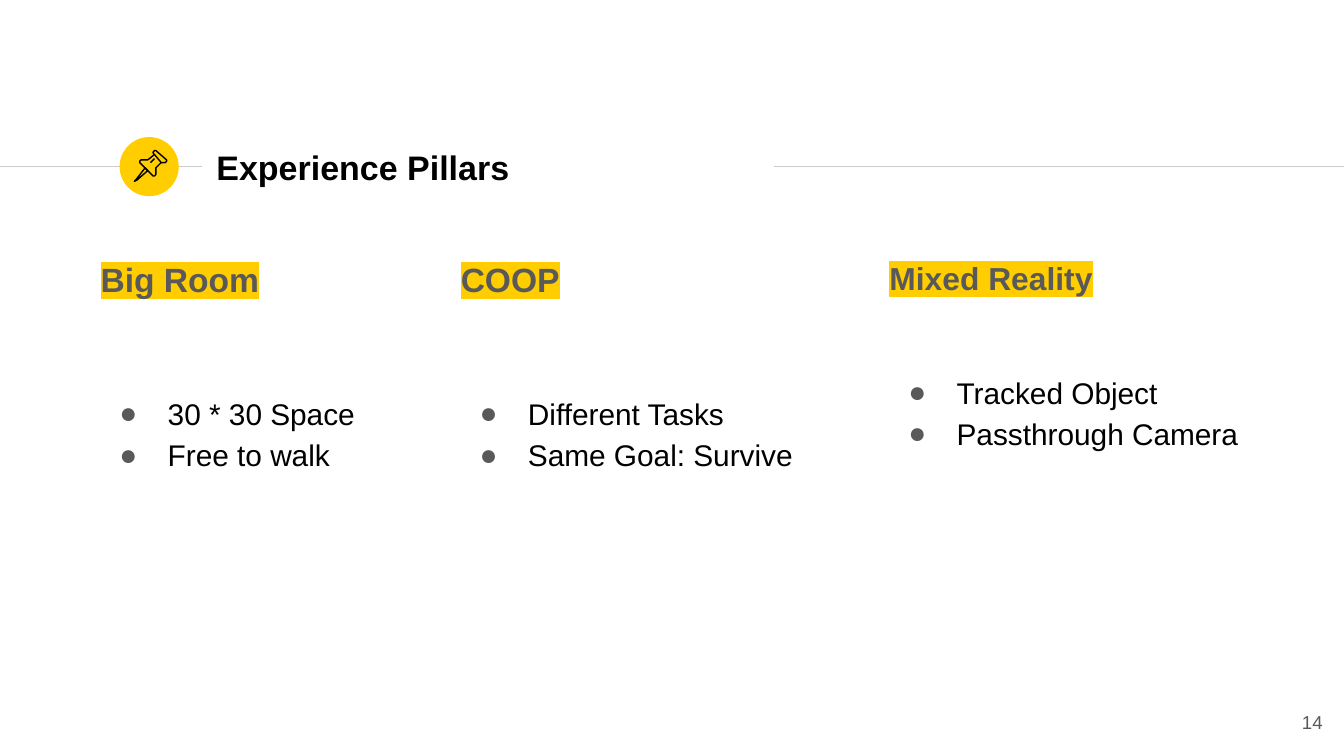
from pptx import Presentation
from pptx.dml.color import RGBColor
from pptx.enum import shapes, text
from pptx.oxml import ns
from pptx.util import Inches, Pt
from lxml import etree

FONT = "Arial"
BLACK, GREY, RULE, YELLOW = "000000", "595959", "CCCCCC", "FFCD00"

# Pushpin outlines in hundredths of an inch from the badge corner: (points, closed)
PIN = [
    ([(19, 23), (12, 32), (11, 33), (13, 32), (21, 25)], True),
    ([(26, 13), (31, 19), (32, 19), (34, 19), (35, 18), (35, 17),
      (27, 10), (26, 10), (25, 11), (25, 12)], True),
    ([(26, 13), (21, 17), (20, 17), (18, 17), (16, 17), (15, 18), (15, 19),
      (25, 29), (26, 29), (27, 28), (27, 26), (27, 23), (31, 19)], False),
    ([(23, 19), (26, 16)], False),
]

# Box, heading, heading size, gap above the bullets in points, bullets
PILLARS = [
    ((0.65, 1.78, 2.83, 3.41), "Big Room", 18, 49,
     ["30 * 30 Space", "Free to walk"]),
    ((3.33, 1.78, 3.19, 3.26), "COOP", 18, 49,
     ["Different Tasks", "Same Goal: Survive"]),
    ((6.52, 1.78, 2.96, 3.41), "Mixed Reality", 17, 39,
     ["Tracked Object", "Passthrough Camera"]),
]


def colour(value):
    return RGBColor.from_string(value)


def add_element(parent, tag, **attributes):
    return etree.SubElement(parent, ns.qn(tag), attributes)


def set_frame(shape, anchor=text.MSO_ANCHOR.TOP):
    frame = shape.text_frame
    frame.word_wrap = True
    frame.auto_size = text.MSO_AUTO_SIZE.NONE
    frame.vertical_anchor = anchor
    frame.margin_left = frame.margin_right = Inches(0.1)
    frame.margin_top = frame.margin_bottom = Inches(0.1)
    return frame


def add_text_box(page, box):
    return set_frame(page.shapes.add_textbox(*map(Inches, box)))


def write(para, words, size, ink=BLACK, bold=False, highlight=None,
          align=text.PP_ALIGN.LEFT, spacing=1.0, before=0):
    para.alignment = align
    para.line_spacing = spacing
    para.space_before = Pt(before)
    span = para.add_run()
    span.text = words
    font = span.font
    font.name, font.size, font.bold = FONT, Pt(size), bold
    font.color.rgb = colour(ink)
    if highlight:
        mark = etree.Element(ns.qn("a:highlight"))
        add_element(mark, "a:srgbClr", val=highlight)
        span._r.get_or_add_rPr().find(ns.qn("a:solidFill")).addnext(mark)


def add_bullet(para):
    properties = para._p.get_or_add_pPr()
    properties.set("marL", str(Inches(0.5)))
    properties.set("indent", str(Inches(-0.36)))
    add_element(add_element(properties, "a:buClr"), "a:srgbClr", val=GREY)
    add_element(properties, "a:buFont", typeface=FONT)
    add_element(properties, "a:buChar", char="●")


def add_rule(page, start, end, height):
    line = page.shapes.add_connector(
        shapes.MSO_CONNECTOR.STRAIGHT,
        Inches(start), Inches(height), Inches(end), Inches(height))
    line.line.color.rgb = colour(RULE)
    line.line.width = Pt(0.75)
    add_element(line._element.spPr, "a:effectLst")


def add_badge(page, box):
    left, top, width, height = map(Inches, box)
    disc = page.shapes.add_shape(shapes.MSO_SHAPE.OVAL, left, top, width, height)
    disc.shadow.inherit = False
    disc.fill.solid()
    disc.fill.fore_color.rgb = colour(YELLOW)
    disc.line.fill.background()

    # Pushpin icon
    icon = page.shapes.add_group_shape()
    for points, closed in PIN:
        outline = icon.shapes.build_freeform(*points[0], scale=Inches(0.01))
        outline.add_line_segments(points[1:], close=closed)
        stroke = outline.convert_to_shape(left, top)
        stroke.shadow.inherit = False
        stroke.fill.background()
        stroke.line.color.rgb = colour(BLACK)
        stroke.line.width = Pt(0.75)


def add_header(page, box):
    left, top, width, height = box
    middle = top + height / 2
    add_rule(page, 0, left - 0.01, middle)
    add_rule(page, left + width + 0.01, 10, middle)
    add_badge(page, (left - 0.62, middle - 0.22, 0.44, 0.44))

    title = page.shapes.title
    title.left, title.top, title.width, title.height = map(Inches, box)
    frame = set_frame(title, text.MSO_ANCHOR.MIDDLE)
    write(frame.paragraphs[0], "Experience Pillars", 18.2, bold=True)


def add_pillar(page, box, heading, size, gap, bullets):
    frame = add_text_box(page, box)
    write(frame.paragraphs[0], heading, size, ink=GREY, bold=True,
          highlight=YELLOW, spacing=1.15)
    for index, words in enumerate(bullets):
        para = frame.add_paragraph()
        write(para, words, 16, spacing=1.15, before=0 if index else gap)
        add_bullet(para)


def add_page_number(page, box):
    frame = add_text_box(page, box)
    write(frame.paragraphs[0], "14", 10, ink=GREY, align=text.PP_ALIGN.RIGHT)


def main():
    deck = Presentation()
    # Widescreen page, 16:9
    deck.slide_width = Inches(10)
    deck.slide_height = deck.slide_width * 9 // 16
    page = deck.slides.add_slide(deck.slide_layouts.get_by_name("Title Only"))

    add_header(page, (1.51, 1, 4.24, 0.48))
    for pillar in PILLARS:
        add_pillar(page, *pillar)
    add_page_number(page, (9.34, 5.19, 0.6, 0.43))

    deck.save("out.pptx")


if __name__ == "__main__":
    main()
